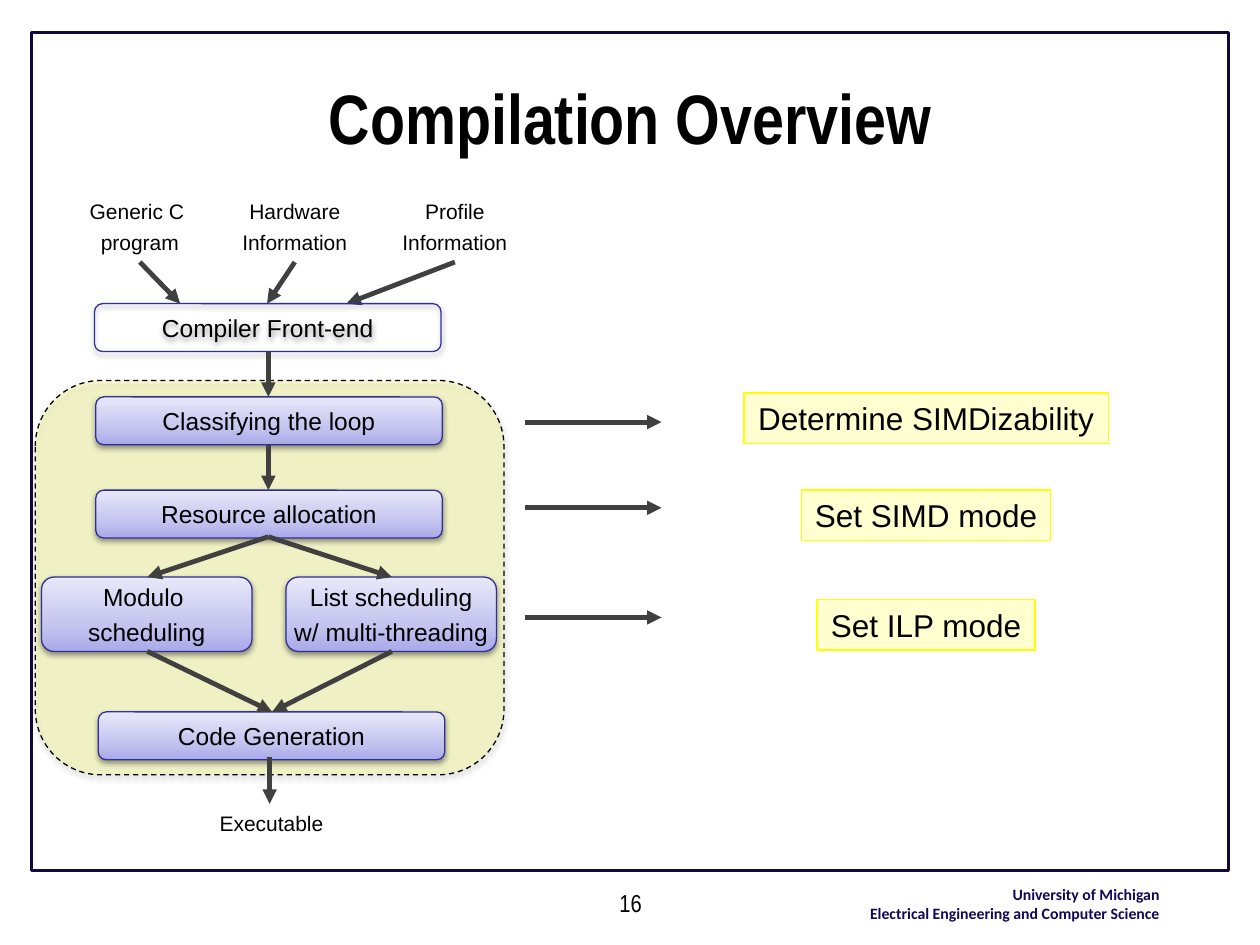
from copy import deepcopy

from pptx import Presentation
from pptx import util as u
from pptx.dml.color import RGBColor
from pptx.enum import dml, shapes, text
from pptx.oxml.ns import qn
from pptx.oxml.xmlchemy import OxmlElement

BLACK, NAVY, VIOLET, GREY = "000000", "10093A", "2F2F98", "404040"
GRADIENT = [(0, "A9A9E9"), (0.35, "C4C4EF"), (1, "E8E8FA")]


def color(hex_string):
    """Turn a hex string into a colour."""
    return RGBColor.from_string(hex_string)


def add_element(parent, tag, **attributes):
    """Append a drawing element with attributes and return it."""
    element = OxmlElement(tag)
    for name, value in attributes.items():
        element.set(name, str(value))
    parent.append(element)
    return element


def write(shape, lines, size, font="Arial", align=text.PP_ALIGN.CENTER,
          hex_string=BLACK, bold=False, gap=0.0, wrap=False):
    """Fill a shape with one formatted paragraph per line."""
    frame = shape.text_frame
    frame.word_wrap = wrap
    frame.text = "\n".join(lines)
    for index, paragraph in enumerate(frame.paragraphs):
        paragraph.alignment = align
        paragraph.space_before = u.Pt(round(gap * size, 1) if index else 0)
        paragraph.font.name = font
        paragraph.font.size = u.Pt(size)
        paragraph.font.bold = bold
        paragraph.font.color.rgb = color(hex_string)


def add_label(slide, box, lines, size, **style):
    """Add a text box in the given box."""
    label = slide.shapes.add_textbox(*map(u.Inches, box))
    write(label, lines, size, **style)
    return label


def add_outline(slide, kind, box, hex_string, width=0.75):
    """Add an unfilled, unshadowed preset shape."""
    shape = slide.shapes.add_shape(kind, *map(u.Inches, box))
    shape.shadow.inherit = False
    shape.fill.background()
    shape.line.color.rgb = color(hex_string)
    shape.line.width = u.Pt(width)
    return shape


def fill_translucent(shape, hex_string, opacity):
    """Fill a shape with a colour at an opacity in percent."""
    shape.fill.solid()
    shape.fill.fore_color.rgb = color(hex_string)
    srgb = shape._element.spPr.find(qn("a:solidFill"))[0]
    add_element(srgb, "a:alpha", val=opacity * 1000)


def fill_gradient(shape):
    """Fill a shape with the violet gradient, dark at the bottom."""
    shape.fill.gradient()
    shape.fill.gradient_angle = 90
    stop_list = shape._element.spPr.find(qn("a:gradFill")).find(qn("a:gsLst"))
    stop_list.append(deepcopy(stop_list[0]))
    for stop, (position, hex_string) in zip(shape.fill.gradient_stops, GRADIENT):
        stop.position = position
        stop.color.rgb = color(hex_string)


def add_shadow(shape):
    """Give a shape a soft shadow below."""
    effects = shape._element.spPr.find(qn("a:effectLst"))
    shadow = add_element(effects, "a:outerShdw", blurRad=u.Pt(3.1), dist=u.Pt(1.6),
                         dir=90 * 60000, rotWithShape=0)
    srgb = add_element(shadow, "a:srgbClr", val=BLACK)
    add_element(srgb, "a:alpha", val=38000)


def add_step(slide, box, lines, filled=True):
    """Add a rounded step of the compiler flow."""
    step = add_outline(slide, shapes.MSO_SHAPE.ROUNDED_RECTANGLE, box, VIOLET)
    if filled:
        fill_gradient(step)
    add_shadow(step)
    frame = step.text_frame
    frame.margin_left = frame.margin_right = frame.margin_top = frame.margin_bottom = 0
    frame.vertical_anchor = text.MSO_ANCHOR.MIDDLE
    write(step, lines, 14, gap=0.23)


def add_arrow(slide, start, end):
    """Add a grey arrow between two points."""
    arrow = slide.shapes.add_connector(
        shapes.MSO_CONNECTOR.STRAIGHT, *map(u.Inches, (*start, *end)))
    arrow.line.color.rgb = color(GREY)
    arrow.line.width = u.Pt(2.75)
    add_element(arrow.line._get_or_add_ln(), "a:tailEnd", type="triangle")
    add_element(arrow._element.spPr, "a:effectLst")


def add_frame(slide, box):
    """Add the border, title, page number and affiliation around a box."""
    left, top, width, height = box
    bottom = top + height
    add_outline(slide, shapes.MSO_SHAPE.RECTANGLE, box, NAVY, 1.5)
    add_label(slide, (left + 6, bottom + 0.06, 3.05, 0.4),
              ["University of Michigan", "Electrical Engineering and Computer Science"],
              9, font="Calibri", align=text.PP_ALIGN.RIGHT, hex_string="0F0958", bold=True)
    add_label(slide, (left + 3.17, bottom + 0.09, 3.17, 0.33), ["16"], 14,
              font="Arial Narrow", wrap=True)
    title = slide.shapes.title
    title.left, title.top, title.width, title.height = map(
        u.Inches, (left + 0.25, top + 0.04, 9, 1.25))
    title.text_frame.vertical_anchor = text.MSO_ANCHOR.MIDDLE
    write(title, ["Compilation Overview"], 40, font="Arial Narrow", bold=True, wrap=True)


def add_inputs(slide, top, targets_top):
    """Add the three inputs and their arrows into the front-end."""
    inputs = [
        (1.11, 1.43, ["Generic C ", "program"]),
        (2.34, 2.12, ["Hardware", "Information"]),
        (3.61, 2.75, ["Profile", "Information"]),
    ]
    for center, target, lines in inputs:
        add_label(slide, (center - 0.52, top, 1.04, 0.55), lines, 12, gap=0.23)
        add_arrow(slide, (center, top + 0.55), (target, targets_top))


def add_flow(slide, box):
    """Add the back-end panel with its steps, and the steps around it."""
    left, top, width, height = box
    panel = add_outline(slide, shapes.MSO_SHAPE.ROUNDED_RECTANGLE, box, BLACK)
    panel.line.dash_style = dml.MSO_LINE.DASH
    fill_translucent(panel, "FFFF00", 17)
    add_shadow(panel)

    center = left + 1.85
    front_top, classify_top, allocate_top, schedule_top, generate_top = (
        top + offset for offset in (-0.61, 0.13, 0.87, 1.56, 2.63))
    step_left, step_width, step_height = left + 0.48, 2.75, 0.38
    add_inputs(slide, 1.53, front_top)
    for step_top, shift, name in [
        (front_top, -0.01, "Compiler Front-end"),
        (classify_top, 0, "Classifying the loop"),
        (allocate_top, 0, "Resource allocation"),
        (generate_top, 0.02, "Code Generation"),
    ]:
        add_step(slide, (step_left + shift, step_top, step_width, step_height),
                 [name], filled=step_top != front_top)
    for start_top, end_top in [(front_top, classify_top), (classify_top, allocate_top)]:
        add_arrow(slide, (center, start_top + step_height), (center, end_top))

    for schedule_left, lines in [
        (left + 0.05, ["Modulo ", "scheduling"]),
        (left + 1.99, ["List scheduling", "w/ multi-threading"]),
    ]:
        add_step(slide, (schedule_left, schedule_top, 1.67, 0.59), lines)
        middle = schedule_left + 0.84
        add_arrow(slide, (center, allocate_top + step_height - 0.01), (middle, schedule_top))
        add_arrow(slide, (middle, schedule_top + 0.59), (center + 0.03, generate_top))

    exit_top = generate_top + 0.73
    add_arrow(slide, (center + 0.01, exit_top - 0.37), (center + 0.01, exit_top))
    add_label(slide, (center - 0.49, exit_top, 1.03, 0.3), ["Executable"], 12)


def add_outcomes(slide, left, center):
    """Add the arrows from the flow and the highlighted outcomes."""
    for arrow_top, box_top, width, name in [
        (3.35, 3.12, 2.89, "Determine SIMDizability"),
        (4.03, 3.89, 1.98, "Set SIMD mode"),
        (4.9, 4.76, 1.73, "Set ILP mode"),
    ]:
        add_arrow(slide, (left, arrow_top), (left + 1.08, arrow_top))
        outcome = add_outline(slide, shapes.MSO_SHAPE.RECTANGLE,
                              (center - width / 2, box_top, width, 0.4), "FFFF00")
        fill_translucent(outcome, "FFFF99", 47)
        write(outcome, [name], 18)


def main():
    """Build the slide and save it."""
    presentation = Presentation()
    presentation.slide_width, presentation.slide_height = u.Inches(10), u.Inches(7.5)
    slide = presentation.slides.add_slide(presentation.slide_layouts[5])
    add_frame(slide, (0.25, 0.26, 9.5, 6.65))
    add_flow(slide, (0.28, 3.02, 3.72, 3.13))
    add_outcomes(slide, 4.17, 7.35)
    presentation.save("out.pptx")


if __name__ == "__main__":
    main()
